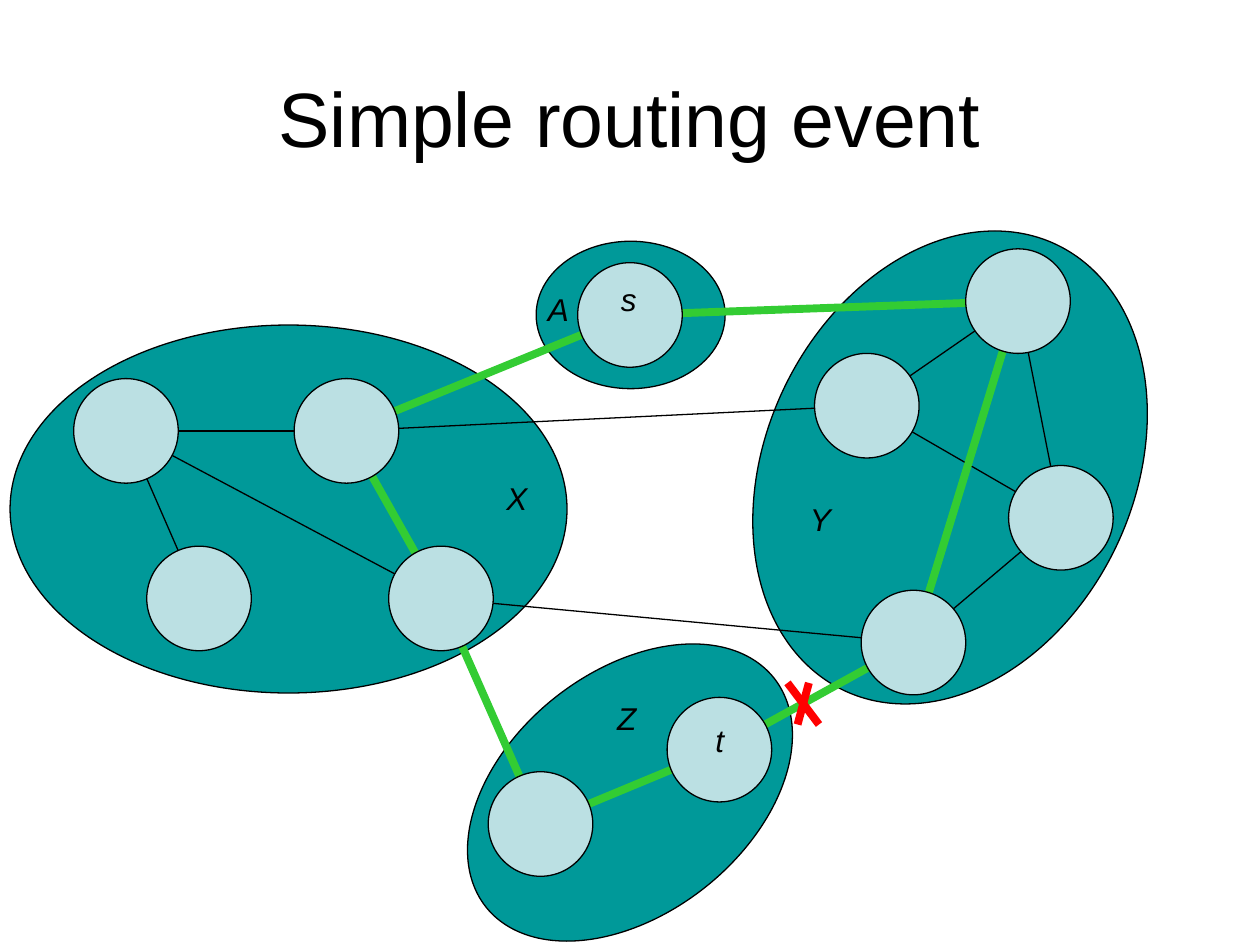
import pptx
import pptx.util
import pptx.dml.color
import pptx.enum.shapes
import pptx.enum.text
import pptx.oxml.ns
import lxml.etree

Inches = pptx.util.Inches
Pt = pptx.util.Pt

COLORS = {
    "text": "000000",
    "outline": "000000",
    "region": "009999",
    "node": "BBE0E3",
    "route": "33CC33",
    "failure": "FF0000",
}
NODE_SIZE = 0.83
THIN = 0.75
THICK = 4.5

REGIONS = [
    (4.04, 4.83, 1.92, 2.92, 51.5),
    (4.42, 1.75, 1.17, 1.5, 90),
    (0.08, 2.58, 4.42, 2.92, 0),
    (5.58, 2.25, 3.92, 2.92, 115.6),
]
NODES = {
    "x1": (1, 3.42),
    "x2": (2.75, 3.42),
    "x3": (1.58, 4.75),
    "x4": (3.5, 4.75),
    "y1": (8.08, 2.39),
    "y2": (6.88, 3.22),
    "y3": (8.42, 4.11),
    "y4": (7.25, 5.1),
    "z1": (4.29, 6.54),
    "s": (5, 2.5),
    "t": (5.71, 5.95),
}
LINKS = [
    ("x1", "x2"), ("x1", "x3"), ("x1", "x4"), ("x2", "y2"), ("x4", "y4"),
    ("y1", "y2"), ("y1", "y3"), ("y2", "y3"), ("y3", "y4"),
]
ROUTES = [
    ("x2", "s"), ("x2", "x4"), ("x4", "z1"), ("t", "z1"),
    ("t", "y4"), ("y1", "s"), ("y1", "y4"),
]
FAILURE_CROSS = [
    ((6.25, 5.42), (6.5, 5.75)),
    ((6.42, 5.42), (6.33, 5.75)),
]
LABELS = [
    ("Y", 6.33, 3.92, 0.39),
    ("X", 3.92, 3.75, 0.4),
    ("Z", 4.8, 5.5, 0.39),
    ("A", 4.25, 2.25, 0.4),
    ("s", 4.83, 2.17, 0.33),
    ("t", 5.58, 5.67, 0.29),
]


class Diagram:
    font_name = "Arial"

    def __init__(self, slide):
        self.slide = slide

    def color(self, name):
        return pptx.dml.color.RGBColor.from_string(COLORS[name])

    def ellipse(self, left, top, width, height, fill, rotation=0):
        shape = self.slide.shapes.add_shape(
            pptx.enum.shapes.MSO_SHAPE.OVAL,
            Inches(left), Inches(top), Inches(width), Inches(height))
        shape.rotation = rotation
        shape.shadow.inherit = False
        shape.fill.solid()
        shape.fill.fore_color.rgb = self.color(fill)
        shape.line.color.rgb = self.color("outline")
        shape.line.width = Pt(THIN)

    def node(self, center):
        x, y = center
        self.ellipse(x - NODE_SIZE / 2, y - NODE_SIZE / 2,
                     NODE_SIZE, NODE_SIZE, "node")

    def line(self, start, end, color, width):
        connector = self.slide.shapes.add_connector(
            pptx.enum.shapes.MSO_CONNECTOR.STRAIGHT,
            *(Inches(value) for value in (*start, *end)))
        connector.line.color.rgb = self.color(color)
        connector.line.width = Pt(width)
        lxml.etree.SubElement(connector.element.spPr,
                              pptx.oxml.ns.qn("a:effectLst"))

    def text(self, wording, left, top, width, height, size, italic=False):
        box = self.slide.shapes.add_textbox(
            Inches(left), Inches(top), Inches(width), Inches(height))
        paragraph = box.text_frame.paragraphs[0]
        run = paragraph.add_run()
        run.text = wording
        run.font.name = self.font_name
        run.font.size = Pt(size)
        run.font.italic = italic
        run.font.color.rgb = self.color("text")
        return box.text_frame

    def title(self, wording):
        frame = self.text(wording, 0.5, 0.3, 9, 1.25, 44)
        frame.word_wrap = True
        frame.vertical_anchor = pptx.enum.text.MSO_ANCHOR.MIDDLE
        frame.paragraphs[0].alignment = pptx.enum.text.PP_ALIGN.CENTER

    def label(self, wording, left, top, width):
        frame = self.text(wording, left, top, width, 0.5, 18, italic=True)
        frame.word_wrap = False
        frame.auto_size = pptx.enum.text.MSO_AUTO_SIZE.SHAPE_TO_FIT_TEXT


def main():
    presentation = pptx.Presentation()
    presentation.slide_width = Inches(10)
    presentation.slide_height = Inches(7.5)
    diagram = Diagram(
        presentation.slides.add_slide(presentation.slide_layouts[6]))

    diagram.title("Simple routing event")
    for left, top, width, height, rotation in REGIONS:
        diagram.ellipse(left, top, width, height, "region", rotation)
    for start, end in LINKS:
        diagram.line(NODES[start], NODES[end], "outline", THIN)
    for start, end in ROUTES:
        diagram.line(NODES[start], NODES[end], "route", THICK)
    for center in NODES.values():
        diagram.node(center)
    for label in LABELS:
        diagram.label(*label)
    for start, end in FAILURE_CROSS:
        diagram.line(start, end, "failure", THICK)

    presentation.save("out.pptx")


if __name__ == "__main__":
    main()
